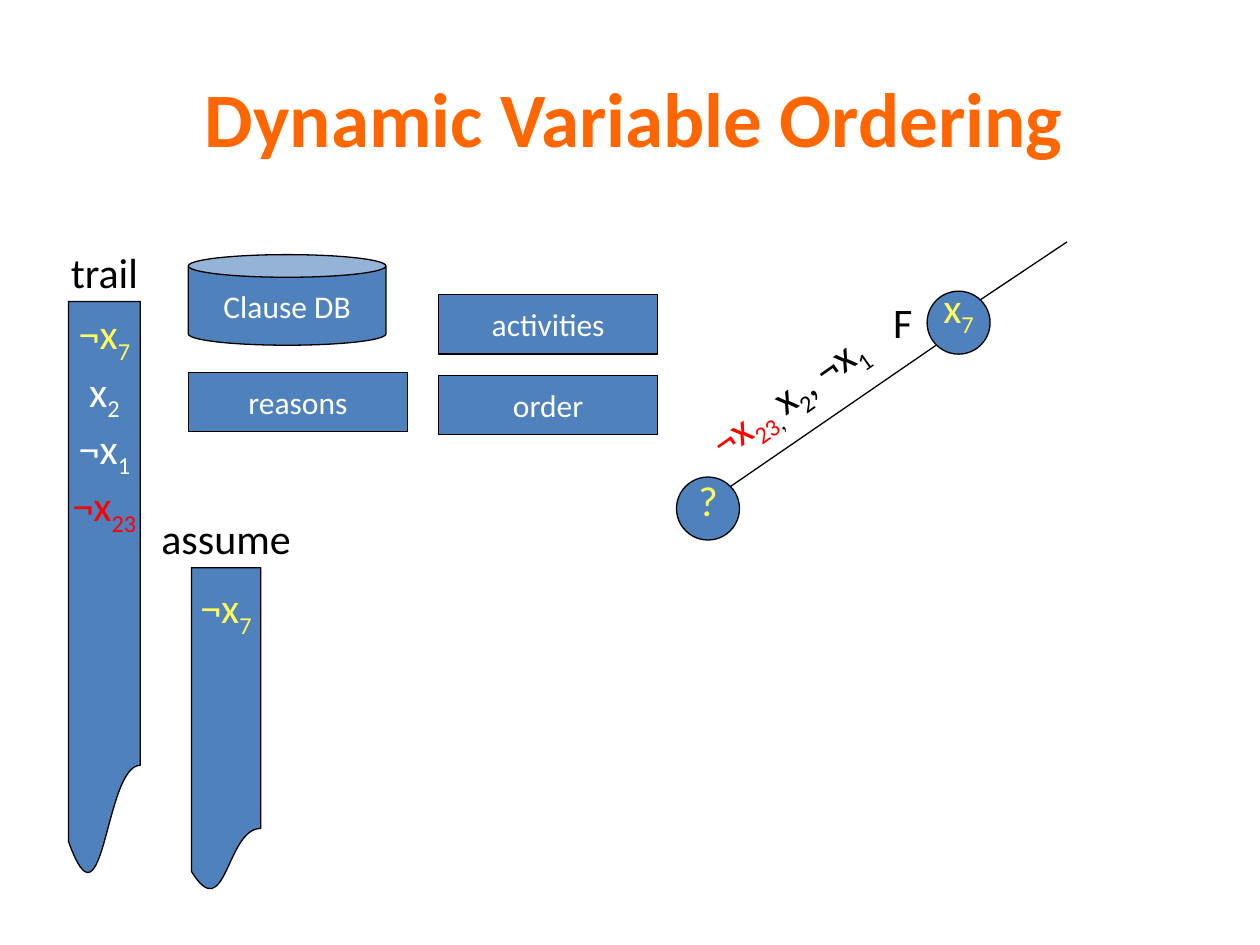
from dataclasses import dataclass

from lxml.etree import SubElement
from pptx import Presentation
from pptx.dml.color import RGBColor
from pptx.enum.shapes import MSO_CONNECTOR, MSO_SHAPE
from pptx.enum.text import MSO_ANCHOR, PP_ALIGN
from pptx.oxml.ns import qn
from pptx.util import Pt


@dataclass(frozen=True)
class Theme:
    font: str = "Calibri"
    title: RGBColor = RGBColor(0xFF, 0x66, 0x00)
    fill: RGBColor = RGBColor(0x4F, 0x81, 0xBD)
    ink: RGBColor = RGBColor(0, 0, 0)
    light: RGBColor = RGBColor(0xFF, 0xFF, 0xFF)
    decision: RGBColor = RGBColor(0xFF, 0xF9, 0x5B)
    implied: RGBColor = RGBColor(0xFF, 0, 0)
    title_size: float = 44
    literal_size: float = 24
    store_size: float = 18
    line_width: float = 0.75


@dataclass(frozen=True)
class Box:
    left: float
    top: float
    width: float
    height: float

    def inside(self, left, top, width, height):
        return Box(self.left + left, self.top + top, width, height)

    def lengths(self):
        return Pt(self.left), Pt(self.top), Pt(self.width), Pt(self.height)


@dataclass(frozen=True)
class Part:
    text: str
    subscript: bool = False
    color: RGBColor | None = None


THEME = Theme()


def literal(name, index):
    return [Part(name), Part(index, True)]


def style(paragraph, size, color):
    paragraph.alignment = PP_ALIGN.CENTER
    paragraph.font.name = THEME.font
    paragraph.font.size = Pt(size)
    if color is not None:
        paragraph.font.color.rgb = color


def write(paragraph, parts, size, color):
    mixed = any(part.color is not None for part in parts)
    style(paragraph, size, None if mixed else color)
    for part in parts:
        run = paragraph.add_run()
        run.text = part.text
        if mixed:
            run.font.color.rgb = part.color or color
        if part.subscript:
            run._r.get_or_add_rPr().set("baseline", "-25000")


def add_label(slide, box, parts, color, anchor=MSO_ANCHOR.MIDDLE):
    label = slide.shapes.add_textbox(*box.lengths())
    frame = label.text_frame
    frame.word_wrap = False
    frame.margin_left = frame.margin_right = 0
    frame.vertical_anchor = anchor
    write(frame.paragraphs[0], parts, THEME.literal_size, color)
    return label


def add_filled(slide, preset, box):
    shape = slide.shapes.add_shape(preset, *box.lengths())
    shape.shadow.inherit = False
    shape.fill.solid()
    shape.fill.fore_color.rgb = THEME.fill
    shape.line.color.rgb = THEME.ink
    shape.line.width = Pt(THEME.line_width)
    return shape


def add_captioned(slide, preset, box, parts, size, color, anchor):
    shape = add_filled(slide, preset, box)
    frame = shape.text_frame
    frame.word_wrap = False
    frame.vertical_anchor = anchor
    write(frame.paragraphs[0], parts, size, color)


def add_branch(slide, box, start, end):
    branch = slide.shapes.add_connector(
        MSO_CONNECTOR.STRAIGHT,
        Pt(box.left + start[0]), Pt(box.top + start[1]),
        Pt(box.left + end[0]), Pt(box.top + end[1]),
    )
    branch.line.color.rgb = THEME.ink
    branch.line.width = Pt(THEME.line_width)
    SubElement(branch._element.spPr, qn("a:effectLst"))


def place_title(slide, box, wording):
    title = slide.shapes.title
    title.left, title.top, title.width, title.height = box.lengths()
    title.text_frame.vertical_anchor = MSO_ANCHOR.MIDDLE
    heading = title.text_frame.paragraphs[0]
    heading.text = wording
    style(heading, THEME.title_size, THEME.title)
    heading.font.bold = True


def draw_stack(slide, box, name, entries, first_entry):
    add_filled(slide, MSO_SHAPE.FLOWCHART_DOCUMENT, box)
    label_width, label_height = 84, 34
    add_label(slide,
              box.inside((box.width - label_width) / 2, -label_height,
                         label_width, label_height),
              [Part(name)], THEME.ink)
    entry_box = box.inside(0, first_entry, box.width, 33 * len(entries))
    (parts, color), *rest = entries
    column = add_label(slide, entry_box, parts, color, MSO_ANCHOR.TOP).text_frame
    column.margin_top = column.margin_bottom = 0
    for parts, color in rest:
        write(column.add_paragraph(), parts, THEME.literal_size, color)


def draw_stores(slide, box):
    width, height, right = 125.3, 33.8, 143
    stores = [
        ("Clause DB", MSO_SHAPE.CAN, box.inside(0, 0, 113, 51.8)),
        ("reasons", MSO_SHAPE.RECTANGLE, box.inside(0, 67.2, width, height)),
        ("activities", MSO_SHAPE.RECTANGLE, box.inside(right, 23, width, height)),
        ("order", MSO_SHAPE.RECTANGLE, box.inside(right, 69.2, width, height)),
    ]
    for name, preset, place in stores:
        add_captioned(slide, preset, place, [Part(name)],
                      THEME.store_size, THEME.light, MSO_ANCHOR.MIDDLE)


def draw_search_tree(slide, box):
    diameter = 36
    nodes = [(literal("x", "7"), 143.2, 28.2), ([Part("?")], 0, 134.4)]
    for parts, left, top in nodes:
        add_captioned(slide, MSO_SHAPE.OVAL, box.inside(left, top, diameter, diameter),
                      parts, THEME.literal_size, THEME.decision, MSO_ANCHOR.BOTTOM)
    add_branch(slide, box, (148.3, 59.1), (31, 139.7))
    add_branch(slide, box, (173.5, 33.2), (223.2, 0))
    add_label(slide, box.inside(109.4, 28.4, 39.6, 34), [Part("F")], THEME.ink)
    propagated = [
        Part("¬x", color=THEME.implied), Part("23", True, THEME.implied),
        Part(", ", True), *literal("x", "2"), *literal(", ¬x", "1"),
    ]
    implications = add_label(slide, box.inside(-2.1, 72, 132.5, 34),
                             propagated, THEME.ink)
    implications.rotation = 324.7


def main():
    deck = Presentation()
    deck.slide_width, deck.slide_height = Pt(720), Pt(540)
    slide = deck.slides.add_slide(deck.slide_layouts[5])
    place_title(slide, Box(36, 21.6, 653, 90), "Dynamic Variable Ordering")
    decision = (literal("¬x", "7"), THEME.decision)
    trail = [
        decision,
        (literal("x", "2"), THEME.light),
        (literal("¬x", "1"), THEME.light),
        (literal("¬x", "23"), THEME.implied),
    ]
    draw_stack(slide, Box(39.2, 172.3, 41, 330.5), "trail", trail, 3.5)
    draw_stack(slide, Box(109.4, 324.4, 39.6, 185.8), "assume", [decision], 8)
    draw_stores(slide, Box(107.6, 145.5, 268.3, 103))
    draw_search_tree(slide, Box(386.6, 138.2, 223.2, 170.6))
    deck.save("out.pptx")


if __name__ == "__main__":
    main()
